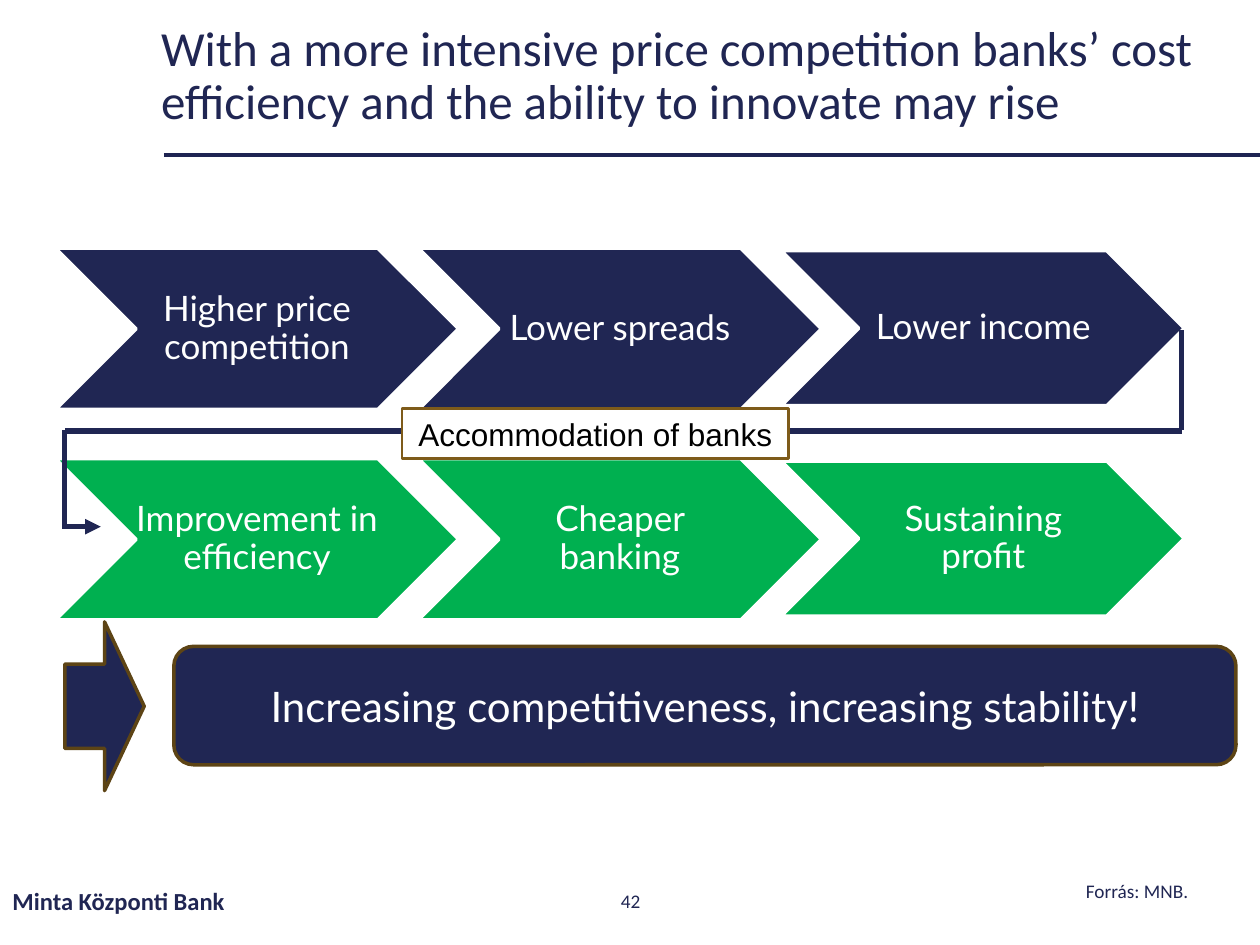
from dataclasses import dataclass

from lxml.etree import SubElement
from pptx import Presentation
from pptx.dml.color import RGBColor
from pptx.enum.shapes import MSO_CONNECTOR, MSO_SHAPE
from pptx.enum.text import MSO_ANCHOR, PP_ALIGN
from pptx.oxml.ns import qn
from pptx.util import Inches, Pt

NAVY = RGBColor(0x20, 0x26, 0x53)
RULE_NAVY = RGBColor(0x1E, 0x24, 0x52)
GREEN = RGBColor(0x00, 0xB0, 0x50)
BROWN = RGBColor(0x5D, 0x44, 0x15)
LABEL_BROWN = RGBColor(0x7E, 0x5B, 0x1A)
WHITE = RGBColor(0xFF, 0xFF, 0xFF)
BLACK = RGBColor(0, 0, 0)


@dataclass(frozen=True)
class Box:
    left: float
    top: float
    width: float
    height: float

    def lengths(self) -> tuple:
        return tuple(Inches(n) for n in (self.left, self.top, self.width, self.height))


@dataclass(frozen=True)
class Style:
    size: float
    font: str = "Calibri"
    color: RGBColor = NAVY
    align: PP_ALIGN = PP_ALIGN.LEFT
    bold: bool = False
    line_spacing: float = 1.0


@dataclass(frozen=True)
class Step:
    """A chevron column: its box within a row and its text area."""
    left: float
    drop: float
    height: float
    text_left: float
    text_width: float


@dataclass(frozen=True)
class Row:
    top: float
    fill: RGBColor
    labels: tuple


STEPS = (
    Step(0.44, 0, 1.28, 1.08, 1.92),
    Step(3.32, 0, 1.28, 3.96, 1.92),
    Step(6.2, 0.02, 1.23, 6.82, 1.97),
)
ROWS = (
    Row(1.97, NAVY, ("Higher price competition", "Lower spreads", "Lower income")),
    Row(3.64, GREEN, ("Improvement in efficiency", "Cheaper banking", "Sustaining profit")),
)
STEP_STYLE = Style(20, "Lato", WHITE, PP_ALIGN.CENTER, line_spacing=0.9)
RETURN_PATH = (
    ((9.38, 2.62), (9.38, 3.41)),
    ((9.38, 3.42), (0.52, 3.42)),
    ((0.51, 3.41), (0.51, 4.2)),
    ((0.52, 4.18), (0.8, 4.18)),
)


def write(shape, text: str, style: Style) -> None:
    frame = shape.text_frame
    frame.word_wrap = True
    frame.vertical_anchor = MSO_ANCHOR.MIDDLE
    paragraph = frame.paragraphs[0]
    paragraph.alignment = style.align
    paragraph.line_spacing = style.line_spacing
    run = paragraph.add_run()
    run.text = text
    run.font.size = Pt(style.size)
    run.font.name = style.font
    run.font.bold = style.bold
    run.font.color.rgb = style.color


def add_text(slide, box: Box, text: str, style: Style):
    shape = slide.shapes.add_textbox(*box.lengths())
    write(shape, text, style)
    return shape


def add_filled(slide, kind: MSO_SHAPE, box: Box, fill: RGBColor, outline: RGBColor,
               weight: float = 2):
    shape = slide.shapes.add_shape(kind, *box.lengths())
    shape.shadow.inherit = False
    shape.fill.solid()
    shape.fill.fore_color.rgb = fill
    shape.line.color.rgb = outline
    shape.line.width = Pt(weight)
    return shape


def add_line(slide, start: tuple, end: tuple, color: RGBColor, weight: float):
    line = slide.shapes.add_connector(
        MSO_CONNECTOR.STRAIGHT, *(Inches(n) for n in (*start, *end)))
    line.line.color.rgb = color
    line.line.width = Pt(weight)
    SubElement(line._element.spPr, qn("a:effectLst"))
    return line


def add_row(slide, row: Row) -> None:
    for step, label in zip(STEPS, row.labels):
        top = row.top + step.drop
        add_filled(slide, MSO_SHAPE.CHEVRON, Box(step.left, top, 3.2, step.height),
                   row.fill, WHITE)
        text_box = Box(step.text_left, top, step.text_width, step.height)
        frame = add_text(slide, text_box, label, STEP_STYLE).text_frame
        frame.margin_left = frame.margin_right = 0
        frame.margin_top = frame.margin_bottom = Inches(0.03)


def add_return_path(slide) -> None:
    """Lead from the end of the first row to the start of the second."""
    for start, end in RETURN_PATH:
        line = add_line(slide, start, end, NAVY, 3)
    SubElement(line.line._get_or_add_ln(), qn("a:tailEnd"), type="triangle")


def main() -> None:
    presentation = Presentation()
    presentation.slide_width = Inches(10)
    presentation.slide_height = Inches(7.5)
    slide = presentation.slides.add_slide(presentation.slide_layouts[6])

    add_line(slide, (1.3, 1.23), (10, 1.23), RULE_NAVY, 2.25)
    add_text(slide, Box(1.18, 0.2, 8.62, 0.83),
             "With a more intensive price competition banks’ cost efficiency "
             "and the ability to innovate may rise", Style(28, line_spacing=0.9))
    add_text(slide, Box(0, 6.95, 3.38, 0.4), "Minta Központi Bank", Style(14, bold=True))
    add_text(slide, Box(3.88, 6.95, 2.25, 0.4), "42", Style(11, align=PP_ALIGN.CENTER))
    add_text(slide, Box(6.57, 6.88, 2.96, 0.4), "Forrás: MNB.",
             Style(11, align=PP_ALIGN.RIGHT, line_spacing=0.9))

    for row in ROWS:
        add_row(slide, row)

    arrow = add_filled(slide, MSO_SHAPE.DOWN_ARROW, Box(0.16, 5.29, 1.34, 0.63), NAVY, BROWN)
    arrow.rotation = 270
    conclusion = add_filled(slide, MSO_SHAPE.ROUNDED_RECTANGLE, Box(1.38, 5.13, 8.43, 0.94),
                            NAVY, BROWN)
    write(conclusion, "Increasing competitiveness, increasing stability!",
          Style(24, "Lato", WHITE, PP_ALIGN.CENTER))

    add_return_path(slide)
    label = add_filled(slide, MSO_SHAPE.RECTANGLE, Box(3.19, 3.24, 3.07, 0.4),
                       WHITE, LABEL_BROWN, 1.5)
    write(label, "Accommodation of banks", Style(18, "Arial", BLACK, PP_ALIGN.CENTER))

    presentation.save("out.pptx")


if __name__ == "__main__":
    main()
